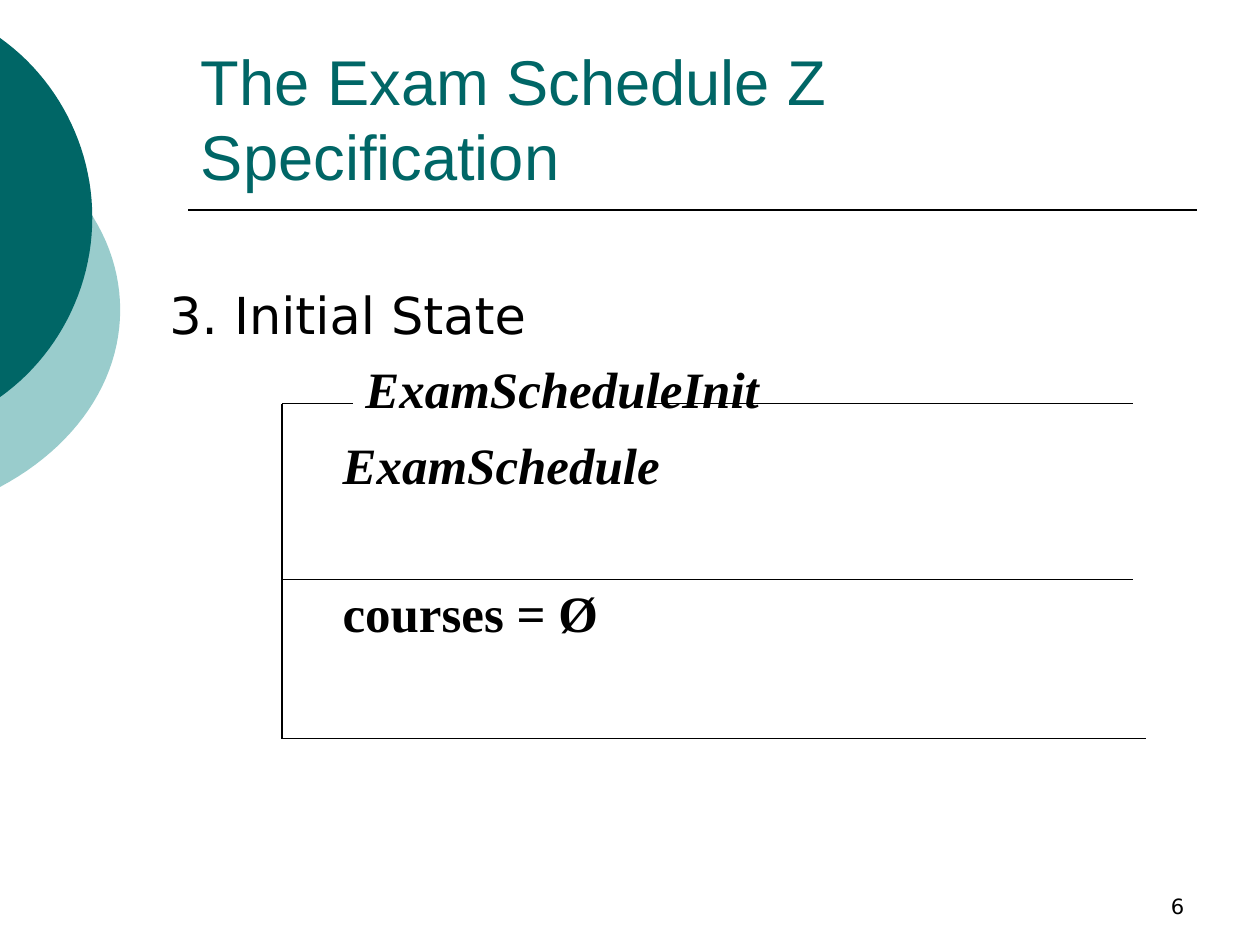
from lxml import etree
from pptx import Presentation
from pptx.dml.color import RGBColor
from pptx.enum import text
from pptx.oxml import ns
from pptx.util import Inches, Pt

TEAL = RGBColor(0x00, 0x66, 0x66)
PALE_TEAL = RGBColor(0x99, 0xCC, 0xCC)
BLACK = RGBColor(0, 0, 0)
CURVE_STEPS = 24

prs = Presentation()
prs.slide_width, prs.slide_height = Inches(9.96), Inches(7.47)
slide = prs.slides.add_slide(prs.slide_layouts[6])


def add_rule(x1, y1, x2, y2, weight):
    rule = slide.shapes.add_connector(1, Inches(x1), Inches(y1), Inches(x2), Inches(y2))
    rule.line.color.rgb = BLACK
    rule.line.width = Pt(weight)
    etree.SubElement(rule._element.spPr, ns.qn("a:effectLst"))


def add_text_frame(left, top, width, height, anchor):
    frame = slide.shapes.add_textbox(
        Inches(left), Inches(top), Inches(width), Inches(height)).text_frame
    frame.word_wrap = True
    frame.vertical_anchor = anchor
    return frame


# Circle segments at the left edge: each half is one Bezier curve, mirrored
# about the middle height. Points are (x, distance above the middle).
segments = [
    (PALE_TEAL, 2.45, [(0, 1.4), (0.6, 1.08), (0.95, 0.56), (0.95, 0)]),
    (TEAL, 1.72, [(0, 1.42), (0.45, 1.1), (0.73, 0.57), (0.73, 0)]),
]
for color, middle, controls in segments:
    upper = []
    for step in range(CURVE_STEPS + 1):
        t = step / CURVE_STEPS
        weights = [(1 - t) ** 3, 3 * t * (1 - t) ** 2, 3 * t ** 2 * (1 - t), t ** 3]
        upper.append([sum(w * point[axis] for w, point in zip(weights, controls))
                      for axis in (0, 1)])
    outline = [(Inches(x), Inches(middle - rise)) for x, rise in upper]
    outline += [(Inches(x), Inches(middle + rise)) for x, rise in reversed(upper[:-1])]
    builder = slide.shapes.build_freeform(*outline[0])
    builder.add_line_segments(outline[1:], close=True)
    segment = builder.convert_to_shape()
    segment.shadow.inherit = False
    segment.fill.solid()
    segment.fill.fore_color.rgb = color
    segment.line.fill.background()

add_rule(1.49, 1.66, 9.46, 1.66, 1)

page_number = add_text_frame(7.14, 6.81, 2.32, 0.5, text.MSO_ANCHOR.BOTTOM).paragraphs[0]
page_number.text = "6"
page_number.alignment = text.PP_ALIGN.RIGHT
page_number.font.size = Pt(12)
page_number.font.name = "DejaVu Sans"
page_number.font.color.rgb = BLACK

title = add_text_frame(1.49, 0.33, 7.97, 1.25, text.MSO_ANCHOR.BOTTOM).paragraphs[0]
title.text = "The Exam Schedule Z Specification"
title.font.size = Pt(36)
title.font.name = "Arial"
title.font.color.rgb = TEAL

# Z schema box, open on the right, with a gap for its name
schema_left, schema_top, schema_bottom = 2.23, 3.19, 5.84
for ends in [
    (schema_left, schema_top, 2.79, schema_top),
    (schema_left, schema_top, schema_left, schema_bottom),
    (schema_left, schema_bottom, 9.06, schema_bottom),
    (5.13, schema_top, 8.96, schema_top),
    (schema_left, 4.58, 8.96, 4.58),
]:
    add_rule(*ends, 0.75)

# Text, font, bold, italic, indent in inches, space before in points
schema_lines = [
    ("3. Initial State", "DejaVu Sans", False, False, 0, 2.5),
    ("ExamScheduleInit", "Times New Roman", True, True, 1.55, 7.2),
    ("ExamSchedule", "Times New Roman", True, True, 1.37, 8.6),
    ("courses = Ø", "Times New Roman", True, False, 1.37, 49.3),
]
body = add_text_frame(1.24, 2.19, 8.5, 4.87, text.MSO_ANCHOR.TOP)
for index, (words, font, bold, italic, indent, gap) in enumerate(schema_lines):
    line = body.add_paragraph() if index else body.paragraphs[0]
    line.text = words
    line.space_before = Pt(gap)
    line.font.size = Pt(29)
    line.font.name = font
    line.font.bold = bold
    line.font.italic = italic
    line.font.color.rgb = BLACK
    line._p.get_or_add_pPr().set("marL", str(Inches(indent)))

prs.save("out.pptx")
